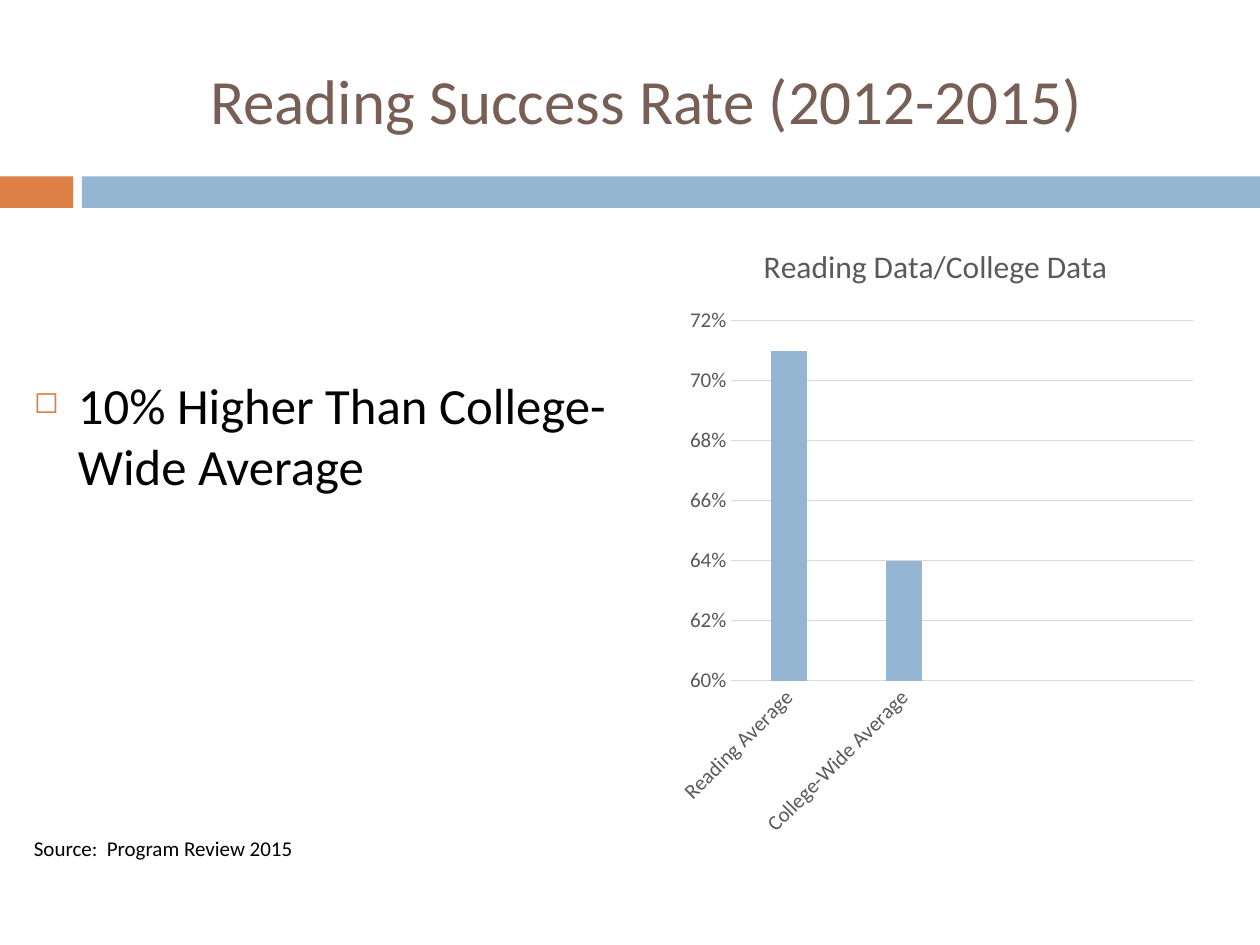
from dataclasses import dataclass

from lxml.etree import SubElement
from pptx import Presentation
from pptx.chart.data import CategoryChartData
from pptx.dml.color import RGBColor
from pptx.enum.chart import XL_CHART_TYPE as ChartType, XL_TICK_MARK as TickMark
from pptx.enum.shapes import MSO_SHAPE as Preset
from pptx.enum.text import MSO_ANCHOR as Anchor, PP_ALIGN as Align
from pptx.oxml.ns import qn
from pptx.util import Inches, Pt

FONT = "Calibri"
ORANGE, BLUE, BROWN = "DD8047", "94B6D2", "775F55"
BLACK, GREY, RULE = "000000", "595959", "D9D9D9"


@dataclass(frozen=True)
class Area:
    """A rectangle on the slide, in inches."""
    left: float
    top: float
    width: float
    height: float

    def box(self) -> tuple:
        """Return the rectangle as lengths for a new shape."""
        return tuple(map(Inches, (self.left, self.top, self.width, self.height)))


@dataclass(frozen=True)
class Band:
    """A coloured strip under the title."""
    area: Area
    colour: str


BANDS = (
    Band(Area(0, 1.4, 0.58, 0.25), ORANGE),
    Band(Area(0.65, 1.4, 9.35, 0.25), BLUE),
)
TITLE = Area(0.67, 0.25, 8.92, 1.08)
BODY = Area(0.17, 1.74, 4.75, 5.34)
CHART = Area(5.3, 1.74, 4.25, 5)


def rgb(colour: str) -> RGBColor:
    """Turn a hex string into a colour."""
    return RGBColor.from_string(colour)


def style(font, size: float, colour: str) -> None:
    """Set face, size and colour of a font."""
    font.name, font.size, font.bold = FONT, Pt(size), False
    font.color.rgb = rgb(colour)


def draw_band(slide, band: Band) -> None:
    """Draw one strip."""
    strip = slide.shapes.add_shape(Preset.RECTANGLE, *band.area.box())
    strip.shadow.inherit = False
    strip.fill.solid()
    strip.fill.fore_color.rgb = rgb(band.colour)
    strip.line.fill.background()


def add_bullet(paragraph, symbol: str, colour: str, percent: int, indent: float) -> None:
    """Give a paragraph a hanging bullet."""
    props = paragraph._p.get_or_add_pPr()
    props.set("marL", str(Inches(indent)))
    props.set("indent", str(-Inches(indent)))
    tint = SubElement(props, qn("a:buClr"))
    SubElement(tint, qn("a:srgbClr"), val=colour)
    SubElement(props, qn("a:buSzPct"), val=str(percent * 1000))
    SubElement(props, qn("a:buChar"), char=symbol)


def draw_title(slide) -> None:
    """Draw the slide title."""
    frame = slide.shapes.add_textbox(*TITLE.box()).text_frame
    frame.word_wrap = True
    frame.vertical_anchor = Anchor.MIDDLE
    frame.text = "Reading Success Rate (2012-2015)"
    heading = frame.paragraphs[0]
    heading.alignment = Align.CENTER
    style(heading.runs[0].font, 36, BROWN)


def draw_body(slide) -> None:
    """Draw the finding and its source line."""
    frame = slide.shapes.add_textbox(*BODY.box()).text_frame
    frame.word_wrap = True
    frame.margin_top = Inches(1.23)
    frame.text = "10% Higher Than College-Wide Average\nSource:  Program Review 2015"
    finding, source = frame.paragraphs
    source.space_before = Pt(194)
    add_bullet(finding, "◻", ORANGE, 60, 0.35)
    style(finding.runs[0].font, 29, BLACK)
    style(source.runs[0].font, 12, BLACK)


def draw_chart(slide) -> None:
    """Draw the success rates as columns."""
    rates = CategoryChartData(number_format="0%")
    rates.categories = ["Reading Average", "College-Wide Average", "", ""]
    rates.add_series("Series 1", (0.71, 0.64, None, None))
    chart = slide.shapes.add_chart(
        ChartType.COLUMN_CLUSTERED, *CHART.box(), rates).chart
    style(chart.font, 10, BLACK)
    chart.has_legend = False
    chart.has_title = True
    caption = chart.chart_title.text_frame
    caption.text = "Reading Data/College Data"
    style(caption.paragraphs[0].runs[0].font, 18, GREY)

    plot = chart.plots[0]
    plot.gap_width, plot.overlap, plot.vary_by_categories = 219, -27, False
    columns = plot.series[0].format.fill
    columns.solid()
    columns.fore_color.rgb = rgb(BLUE)

    names, percents = chart.category_axis, chart.value_axis
    for axis in (names, percents):
        axis.major_tick_mark = axis.minor_tick_mark = TickMark.NONE
        style(axis.tick_labels.font, 12, GREY)
    names._element.txPr.find(qn("a:bodyPr")).set("rot", "-2700000")
    percents.minimum_scale, percents.maximum_scale = 0.6, 0.72
    percents.major_unit = 0.02
    percents.tick_labels.number_format = "0%"
    percents.tick_labels.number_format_is_linked = False
    percents.format.line.fill.background()
    for line in (names.format.line, percents.major_gridlines.format.line):
        line.color.rgb = rgb(RULE)
        line.width = Pt(0.75)


def main() -> None:
    """Build and save the slide."""
    deck = Presentation()
    deck.slide_width, deck.slide_height = Inches(10), Inches(7.5)
    slide = deck.slides.add_slide(deck.slide_layouts[6])
    for band in BANDS:
        draw_band(slide, band)
    draw_title(slide)
    draw_body(slide)
    draw_chart(slide)
    deck.save("out.pptx")


if __name__ == "__main__":
    main()
